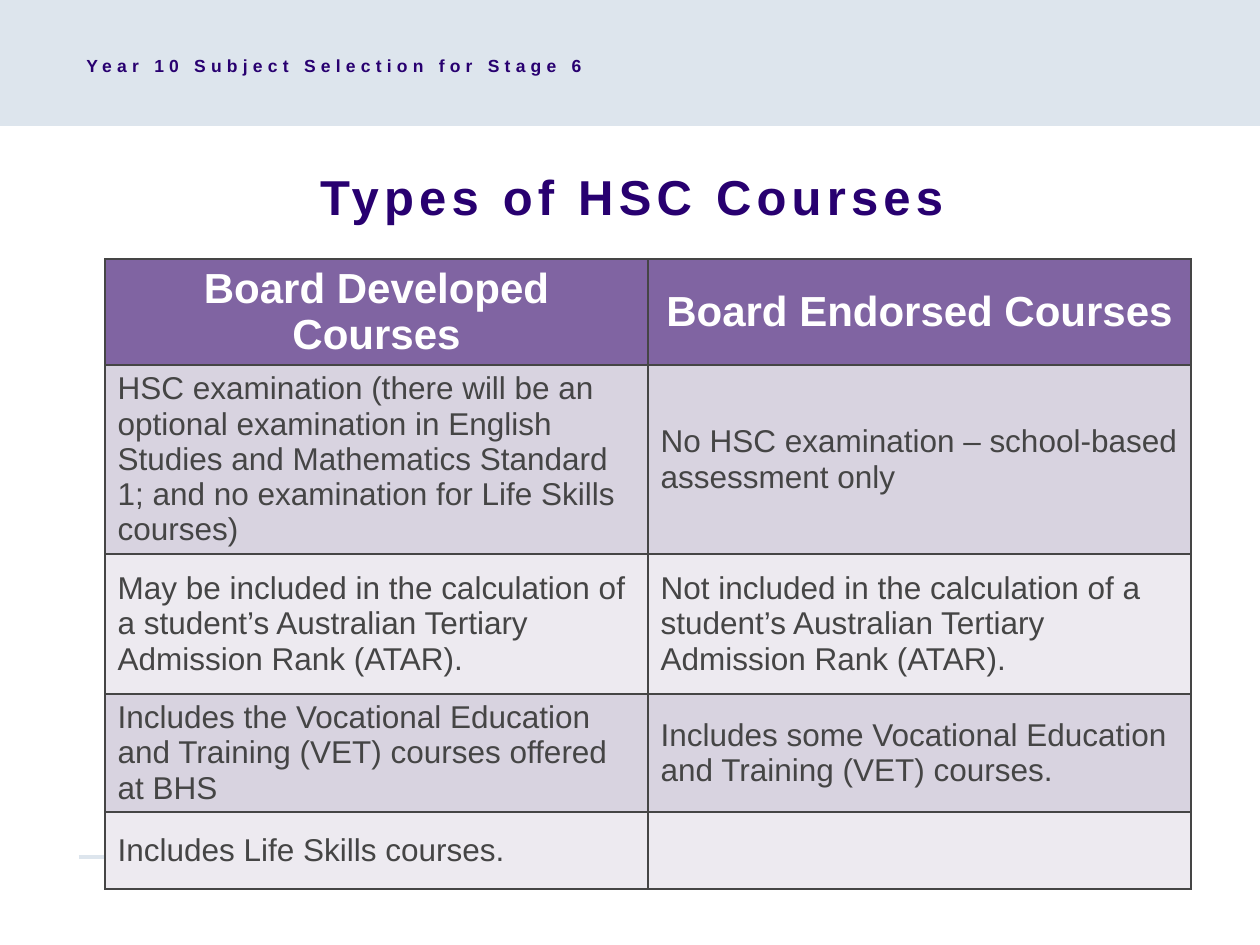
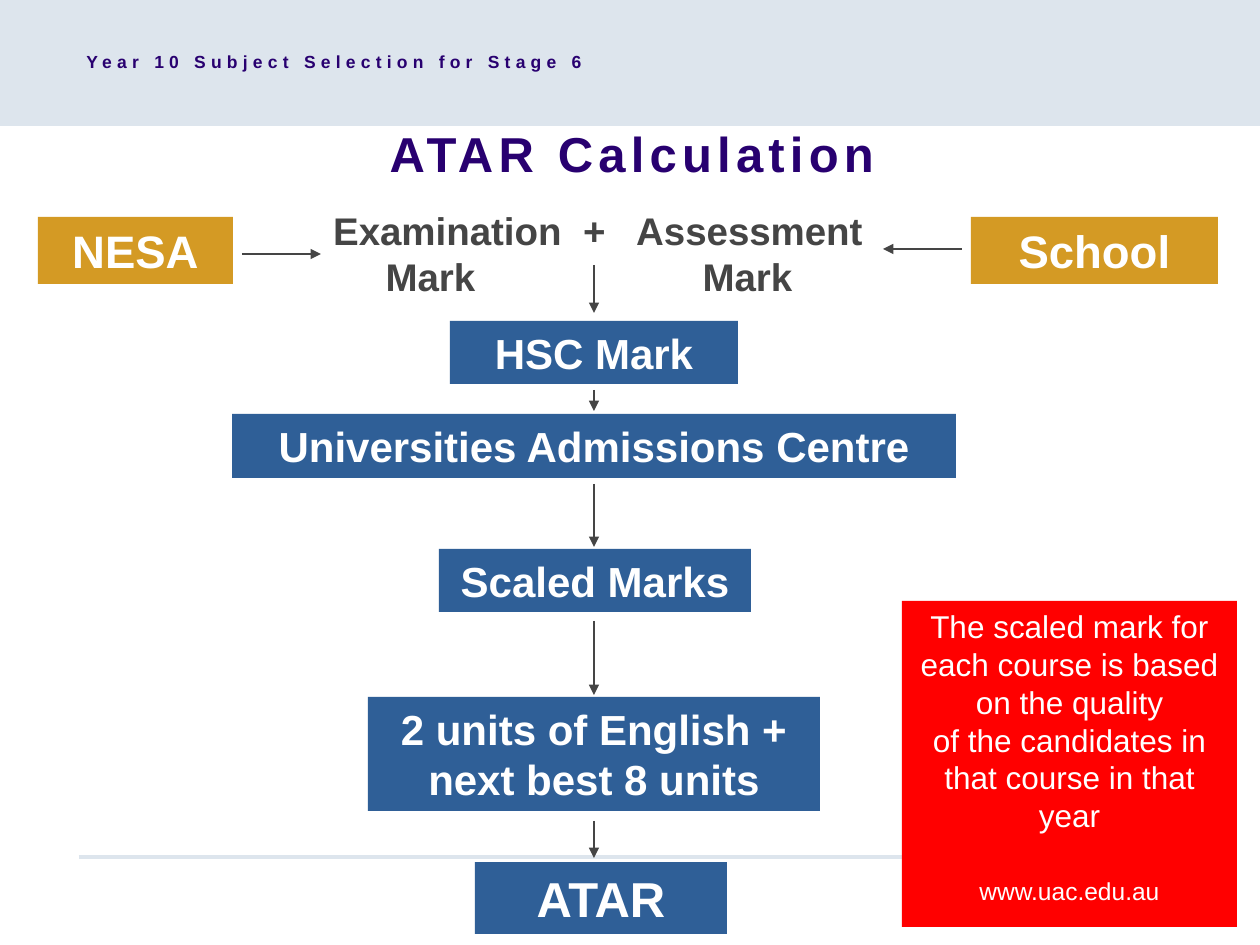
from dataclasses import dataclass

from lxml.etree import SubElement
from pptx import Presentation
from pptx.dml.color import RGBColor
from pptx.enum.shapes import MSO_CONNECTOR, MSO_SHAPE
from pptx.enum.text import MSO_ANCHOR, PP_ALIGN
from pptx.oxml.ns import qn
from pptx.util import Pt


@dataclass(frozen=True)
class Theme:
    """Colours, type sizes and font shared by the slides."""
    font: str = "Arial"
    band: str = "DDE5ED"
    title: str = "280070"
    ink: str = "454545"
    white: str = "FFFFFF"
    table_head: str = "8064A2"
    row_dark: str = "D8D3E0"
    row_light: str = "EDEAF0"
    source: str = "D49A24"
    step: str = "2F5F97"
    note: str = "FF0000"
    title_size: int = 28
    source_size: int = 26
    step_size: int = 24
    mark_size: int = 22
    body_size: int = 18
    link_size: int = 14
    header_size: int = 10
    tracking: int = 300


T = Theme()
HEADER = "Year 10 Subject Selection for Stage 6"
COURSES = [
    ("Board Developed Courses", "Board Endorsed Courses"),
    ("HSC examination (there will be an optional examination in English Studies and "
     "Mathematics Standard 1; and no examination for Life Skills courses)",
     "No HSC examination – school-based assessment only"),
    ("May be included in the calculation of a student’s Australian Tertiary "
     "Admission Rank (ATAR).",
     "Not included in the calculation of a student’s Australian Tertiary "
     "Admission Rank (ATAR)."),
    ("Includes the Vocational Education and Training (VET) courses offered at BHS",
     "Includes some Vocational Education and Training (VET) courses."),
    ("Includes Life Skills courses.", ""),
]
ROW_HEIGHTS = [106, 189, 140, 118, 77]
STEPS = [
    ("HSC Mark", 0, 104, 288, 63, T.step_size),
    ("Universities Admissions Centre", 0, 197, 724, 64, T.step_size),
    ("Scaled Marks", 1, 332, 312, 63, T.step_size),
    ("2 units of English + next best 8 units", 0, 480, 452, 114, T.step_size),
    ("ATAR", 7, 645, 252, 72, T.title_size),
]
STEP_ARROWS = [(48, 96), (173, 194), (267, 330), (404, 478), (604, 641)]


def px(n):
    """Turn px at 126 to the inch into EMU."""
    return round(n * 914400 / 126)


def rgb(color):
    """Make a colour from its hex code."""
    return RGBColor.from_string(color)


def write(tf, text, size=T.body_size, color=T.ink, bold=False, align=PP_ALIGN.LEFT,
          anchor=MSO_ANCHOR.MIDDLE, tracking=0, before=None, tabs=(), more=False):
    """Write one paragraph into a text frame, after the others if more is set."""
    p = tf.add_paragraph() if more else tf.paragraphs[0]
    if tabs:
        tab_list = SubElement(p._p.get_or_add_pPr(), qn("a:tabLst"))
        for pos in tabs:
            SubElement(tab_list, qn("a:tab"), pos=str(px(pos)), algn="ctr")
    tf.word_wrap = True
    tf.vertical_anchor = anchor
    p.alignment = align
    p.space_before = before
    p.text = text
    for r in p.runs:
        r.font.name, r.font.size, r.font.bold = T.font, Pt(size), bold
        r.font.color.rgb = rgb(color)
        if tracking:
            r._r.get_or_add_rPr().set("spc", str(tracking))


def text_box(s, x, y, w, h, text, **fmt):
    """Add a text box and return its frame."""
    tf = s.shapes.add_textbox(px(x), px(y), px(w), px(h)).text_frame
    write(tf, text, **fmt)
    return tf


def filled_box(s, x, y, w, h, fill, text="", **fmt):
    """Add a plain filled rectangle and return its frame."""
    sp = s.shapes.add_shape(MSO_SHAPE.RECTANGLE, px(x), px(y), px(w), px(h))
    sp.shadow.inherit = False
    sp.fill.solid()
    sp.fill.fore_color.rgb = rgb(fill)
    sp.line.fill.background()
    if text:
        write(sp.text_frame, text, color=T.white, align=PP_ALIGN.CENTER, **fmt)
    return sp.text_frame


def line(s, x1, y1, x2, y2, color=T.ink, width=0.75, arrow=True):
    """Add a straight line, with an arrowhead at its end if asked."""
    c = s.shapes.add_connector(MSO_CONNECTOR.STRAIGHT, px(x1), px(y1), px(x2), px(y2))
    c.line.color.rgb = rgb(color)
    c.line.width = Pt(width)
    if arrow:
        SubElement(c.line._get_or_add_ln(), qn("a:tailEnd"), type="triangle")
    SubElement(c._element.spPr, qn("a:effectLst"))


def base_slide(prs, title, title_y, header_y):
    """Add a slide with its band, rule, title and header line."""
    s = prs.slides.add_slide(prs.slide_layouts[6])
    filled_box(s, 0, 0, 1260, 126, T.band)
    line(s, 79, 857, 1186, 857, color=T.band, width=2, arrow=False)
    fmt = dict(color=T.title, bold=True, tracking=T.tracking)
    text_box(s, 74, title_y, 1116, 77, title, size=T.title_size, align=PP_ALIGN.CENTER, **fmt)
    text_box(s, 74, header_y, 791, 34, HEADER, size=T.header_size, **fmt)
    return s


def style_cell(cell, fill):
    """Give a table cell its borders, margins and fill."""
    tc_pr = cell._tc.get_or_add_tcPr()
    for side in ("lnL", "lnR", "lnT", "lnB"):
        ln = SubElement(tc_pr, qn(f"a:{side}"), w=str(Pt(1)))
        SubElement(SubElement(ln, qn("a:solidFill")), qn("a:srgbClr"), val=T.ink)
    cell.fill.solid()
    cell.fill.fore_color.rgb = rgb(fill)
    cell.margin_top = cell.margin_bottom = 0


def course_table(s, x, y, w):
    """Add the table that compares the two types of course."""
    table = s.shapes.add_table(len(COURSES), 2, px(x), px(y), px(w), px(sum(ROW_HEIGHTS))).table
    table.first_row = table.horz_banding = False
    for col in table.columns:
        col.width = px(w / 2)
    for i, (texts, height) in enumerate(zip(COURSES, ROW_HEIGHTS)):
        table.rows[i].height = px(height)
        fmt = {}
        fill = T.row_dark if i % 2 else T.row_light
        if i == 0:
            fill = T.table_head
            fmt = dict(size=T.step_size, color=T.white, bold=True, align=PP_ALIGN.CENTER)
        for cell, text in zip(table.rows[i].cells, texts):
            style_cell(cell, fill)
            cell.vertical_anchor = MSO_ANCHOR.MIDDLE
            if text:
                write(cell.text_frame, text, **fmt)


def mark_sources(s, x, y):
    """Add the two sources of marks, and the marks they give."""
    fmt = dict(size=T.source_size, bold=True)
    filled_box(s, x, y, 195, 67, T.source, "NESA", **fmt)
    filled_box(s, x + 933, y, 247, 67, T.source, "School", **fmt)
    line(s, x + 204, y + 37, x + 283, y + 37)
    line(s, x + 924, y + 32, x + 845, y + 32)
    fmt = dict(size=T.mark_size, bold=True, anchor=MSO_ANCHOR.TOP)
    tf = text_box(s, x + 273, y - 16, 588, 106, "\tExamination\t+\tAssessment",
                  tabs=(124, 271, 426), **fmt)
    write(tf, "\tMark\tMark", tabs=(107, 424), more=True, **fmt)


def step_chain(s, axis, y):
    """Add the steps from HSC mark to ATAR along one axis."""
    for text, shift, top, w, h, size in STEPS:
        filled_box(s, axis + shift - w / 2, y + top, w, h, T.step, text, size=size, bold=True)
    for start, end in STEP_ARROWS:
        line(s, axis, y + start, axis, y + end)


def scaling_note(s, x, y, w, h):
    """Add the note on scaled marks with its web address."""
    tf = filled_box(s, x, y, w, h, T.note,
                    "The scaled mark for each course is based on the quality\v"
                    "of the candidates in that course in that year", anchor=MSO_ANCHOR.TOP)
    write(tf, "www.uac.edu.au", size=T.link_size, color=T.white, align=PP_ALIGN.CENTER,
          anchor=MSO_ANCHOR.TOP, before=Pt(24), more=True)


def main():
    """Build and save the two slides."""
    prs = Presentation()
    prs.slide_width, prs.slide_height = px(1260), px(945)
    s = base_slide(prs, "Types of HSC Courses", 157, 48)
    course_table(s, 105, 259, 1086)
    s = base_slide(prs, "ATAR Calculation", 114, 44)
    mark_sources(s, 38, 217)
    step_chain(s, 594, 217)
    scaling_note(s, 902, 601, 335, 326)
    prs.save("out.pptx")


if __name__ == "__main__":
    main()
